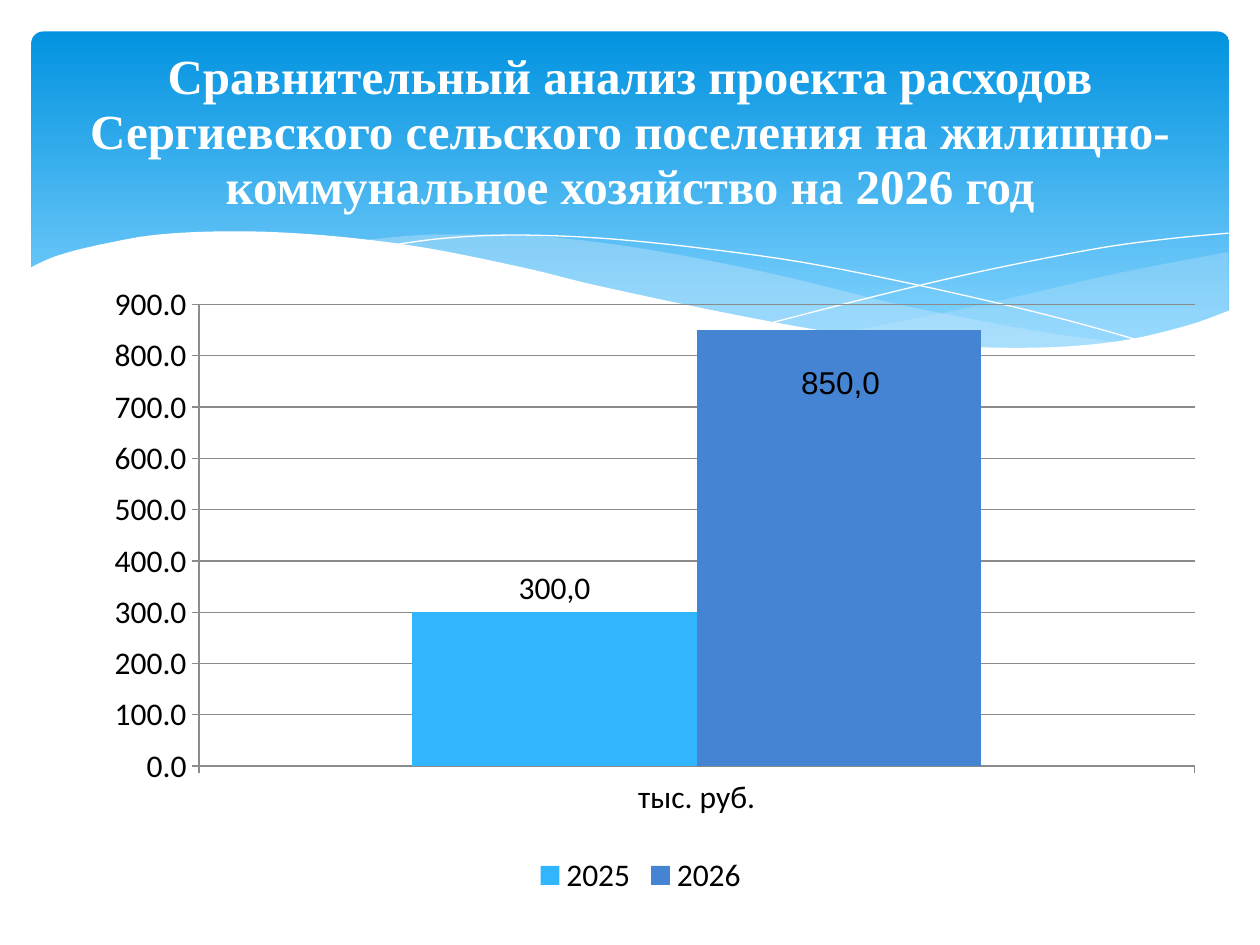
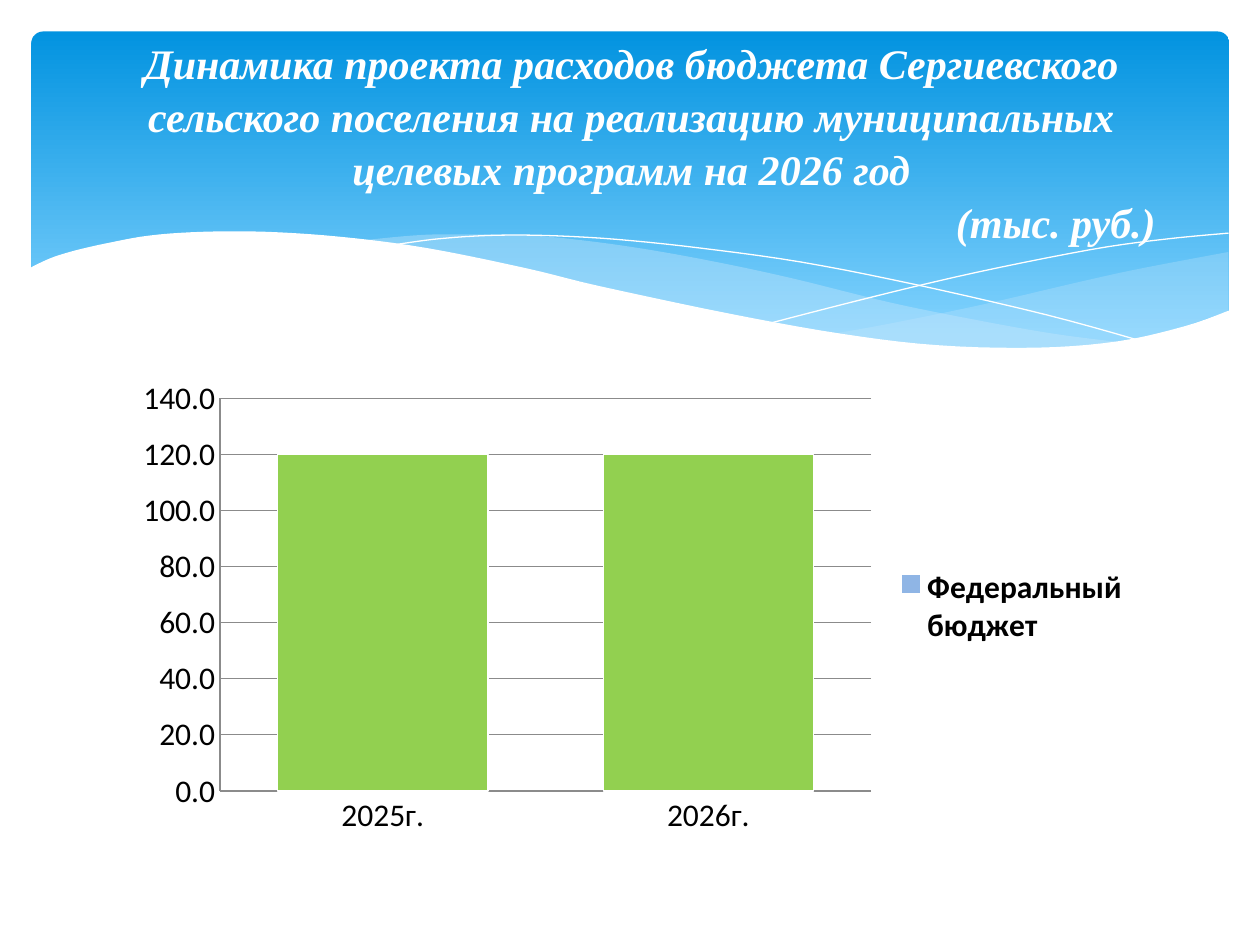
from lxml import etree
from pptx import Presentation
from pptx.chart.data import CategoryChartData
from pptx.dml.color import RGBColor
from pptx.enum import chart as charts, shapes, text
from pptx.oxml import parse_xml
from pptx.oxml.ns import nsdecls, qn
from pptx.util import Pt

# Colours and fonts
WHITE = RGBColor(0xFF, 0xFF, 0xFF)
BLACK = RGBColor(0, 0, 0)
BAND_TOP = RGBColor(0x02, 0x93, 0xE0)
BAND_BOTTOM = RGBColor(0x83, 0xD3, 0xFE)
MIST = RGBColor(0xC6, 0xE7, 0xFC)
AXIS_GREY = RGBColor(0x8B, 0x8B, 0x8B)
SKY = RGBColor(0x31, 0xB6, 0xFD)
BLUE = RGBColor(0x45, 0x84, 0xD3)
GREEN = RGBColor(0x92, 0xD0, 0x50)
CYAN = RGBColor(0x00, 0xB0, 0xF0)
PALE_BLUE = RGBColor(0x8F, 0xB5, 0xE5)
TITLE_FONT, CHART_FONT, NOTE_FONT = "Times New Roman", "Calibri", "Arial"

# Key points of the wave curves, in points
RIGHT_HILL = [(702, 144), (652.3, 153.4), (619.2, 160.6), (560.9, 174.2),
              (508.3, 185), (475.9, 190.8)]
RIGHT_HILL_BASE = [(475.9, 190.8), (507.6, 195.1), (545, 198), (586.1, 199.4),
                   (627.8, 197.3), (662.4, 190.8), (702, 177.8)]
LONG_WAVE = [(642.2, 195.8), (602.6, 190.8), (558, 182.9), (508.3, 172.8),
             (452.9, 159.1), (409.7, 149.8), (370.1, 142.6), (334.1, 137.5),
             (302.4, 134.6), (259.9, 133.9), (236.2, 134.6), (205.9, 137.5)]
LONG_WAVE_BASE = [(205.9, 137.5), (246.2, 143.3), (290.9, 151.9), (323.3, 159.1),
                  (380.9, 172.8), (432.7, 183.6), (478.8, 191.5), (519.8, 196.6),
                  (555.8, 199.4), (588.2, 200.2), (617, 198.7), (642.2, 195.8)]
FALLING_LINE = [(222.5, 140.4), (247.7, 136.8), (278.6, 134.6), (311.8, 134.6),
                (352.1, 136.8), (400.3, 141.8), (457.9, 149.8), (523.4, 162.7),
                (598.3, 180), (653, 195.1)]
RISING_LINE = [(441.4, 184.3), (500.4, 169.2), (558.7, 155.5), (623.5, 142.6),
               (664.6, 136.8), (702, 133.2)]
WHITE_WAVE = [(703.4, 177.1), (676.8, 186.5), (638.6, 195.1), (592.6, 198.7),
              (535.7, 197.3), (481, 190.8), (416.9, 179.3), (342, 163.4),
              (301, 153.4), (244.1, 141.8), (195.1, 135.4), (151.9, 132.5),
              (115.9, 132.5), (85.7, 134.6), (61.2, 139), (42.5, 143.3),
              (28.8, 147.6), (16.6, 153.4)]
WHITE_WAVE_CORNERS = [(16.6, 236.9), (703.4, 236.9)]


def smooth(knots, steps=5):
    """Points of a Catmull-Rom curve through the knots."""
    ends = [knots[0], *knots, knots[-1]]
    curve = []
    for a, b, c, d in zip(ends, ends[1:], ends[2:], ends[3:]):
        for t in (step / steps for step in range(steps)):
            curve.append(tuple(
                q + t * (r - p) / 2 + t**2 * (2 * p - 5 * q + 4 * r - s) / 2
                + t**3 * (3 * q - p - 3 * r + s) / 2
                for p, q, r, s in zip(a, b, c, d)))
    return curve + [knots[-1]]


def style(font, size=18, name=CHART_FONT, color=BLACK, bold=False, italic=False):
    font.size, font.name, font.bold, font.italic = Pt(size), name, bold, italic
    font.color.rgb = color


def write(para, words, align=None, spacing=None, right_indent=0, **font):
    """Put formatted text into a paragraph."""
    para.alignment, para.line_spacing = align, spacing
    if right_indent:
        para._p.get_or_add_pPr().set("marR", str(Pt(right_indent)))
    span = para.add_run()
    span.text = words
    style(span.font, **font)


class Deck:
    def __init__(self):
        self.file = Presentation()
        self.file.slide_width, self.file.slide_height = Pt(720), Pt(540)
        self.page = None

    def add_page(self):
        self.page = self.file.slides.add_slide(self.file.slide_layouts[5])
        self.band()

    def band(self):
        """Blue header with waves."""
        header = self.page.shapes.add_shape(
            shapes.MSO_SHAPE.ROUNDED_RECTANGLE, Pt(18), Pt(18), Pt(684.5), Pt(194.4))
        header.adjustments[0] = 0.034
        header.shadow.inherit = False
        header.line.fill.background()
        header.fill.gradient()
        header.fill.gradient_angle = 270
        for stop, color, place in zip(header.fill.gradient_stops,
                                      (BAND_TOP, BAND_BOTTOM), (0, 0.9)):
            stop.color.rgb, stop.position = color, place
        self.curve(smooth(RIGHT_HILL) + smooth(RIGHT_HILL_BASE), fill=MIST, opacity=29)
        self.curve(smooth(LONG_WAVE) + smooth(LONG_WAVE_BASE), fill=MIST, opacity=40)
        self.curve(smooth(FALLING_LINE))
        self.curve(smooth(RISING_LINE))
        self.curve(smooth(WHITE_WAVE) + WHITE_WAVE_CORNERS, fill=WHITE)

    def curve(self, points, fill=None, opacity=100):
        """Filled outline, or a white hairline when there is no fill."""
        start, *rest = [(Pt(x), Pt(y)) for x, y in points]
        builder = self.page.shapes.build_freeform(*start)
        builder.add_line_segments(rest, close=fill is not None)
        shape = builder.convert_to_shape()
        shape.shadow.inherit = False
        if fill is None:
            shape.fill.background()
            shape.line.color.rgb, shape.line.width = WHITE, Pt(0)
            return
        shape.line.fill.background()
        shape.fill.solid()
        shape.fill.fore_color.rgb = fill
        if opacity < 100:
            color = shape._element.spPr.find(qn("a:solidFill"))[0]
            etree.SubElement(color, qn("a:alpha")).set("val", str(opacity * 1000))

    def title(self, left, top, width, height, lines, **font):
        """Each line is its words and its paragraph format."""
        box = self.page.shapes.title
        box.left, box.top, box.width, box.height = map(Pt, (left, top, width, height))
        self.page.shapes._spTree.append(box._element)
        frame = box.text_frame
        frame.auto_size = text.MSO_AUTO_SIZE.NONE
        frame.vertical_anchor = text.MSO_ANCHOR.MIDDLE
        for index, (words, layout) in enumerate(lines):
            para = frame.add_paragraph() if index else frame.paragraphs[0]
            write(para, words, name=TITLE_FONT, color=WHITE, bold=True, **layout, **font)

    def note(self, left, top, width, height, words):
        box = self.page.shapes.add_textbox(*map(Pt, (left, top, width, height)))
        box.text_frame.word_wrap = True
        write(box.text_frame.paragraphs[0], words, name=NOTE_FONT)

    def chart(self, kind, place, categories, series, gap, overlap, top, step, tick,
              legend, area, outline=None, bold_legend=False, hidden=()):
        """Column chart; series is a list of (name, values, colour)."""
        data = CategoryChartData(number_format="#,##0.0")
        data.categories = categories
        for name, values, _ in series:
            data.add_series(name, values)
        chart = self.page.shapes.add_chart(kind, *map(Pt, place), data).chart
        style(chart.font, size=10)
        chart.has_title = False

        # Columns
        plot = chart.plots[0]
        plot.gap_width, plot.overlap, plot.vary_by_categories = gap, overlap, False
        for column, (_, _, color) in zip(plot.series, series):
            column.format.fill.solid()
            column.format.fill.fore_color.rgb = color
            if outline is not None:
                column.format.line.color.rgb = outline
                column.format.line.width = Pt(0.75)

        # Axes
        scale = chart.value_axis
        scale.minimum_scale, scale.maximum_scale, scale.major_unit = 0, top, step
        scale.tick_labels.number_format = "#,##0.0"
        scale.tick_labels.number_format_is_linked = False
        for axis in (chart.category_axis, scale):
            axis.major_tick_mark = tick
            style(axis.tick_labels.font)
        for line in (chart.category_axis.format.line, scale.format.line,
                     scale.major_gridlines.format.line):
            line.color.rgb, line.width = AXIS_GREY, Pt(0.75)

        # Legend
        chart.has_legend = True
        chart.legend.position, chart.legend.include_in_layout = legend, False
        style(chart.legend.font, bold=bold_legend)
        for index in reversed(hidden):
            chart.legend._element.find(qn("c:legendPos")).addnext(parse_xml(
                f'<c:legendEntry {nsdecls("c")}><c:idx val="{index}"/>'
                '<c:delete val="1"/></c:legendEntry>'))

        # Plot area
        plot_area = chart._chartSpace.chart.plotArea
        for old in plot_area.findall(qn("c:layout")):
            plot_area.remove(old)
        parts = "".join(f'<c:{key}Mode val="edge"/>' for key in "xy") + "".join(
            f'<c:{key} val="{value}"/>' for key, value in zip("xywh", area))
        plot_area.insert(0, parse_xml(
            f'<c:layout {nsdecls("c")}><c:manualLayout><c:layoutTarget val="inner"/>'
            f'{parts}</c:manualLayout></c:layout>'))
        return chart


def main():
    deck = Deck()
    center, right = text.PP_ALIGN.CENTER, text.PP_ALIGN.RIGHT

    # Slide 1: housing and utilities
    deck.add_page()
    housing = deck.chart(
        charts.XL_CHART_TYPE.COLUMN_CLUSTERED, (42.5, 158.4, 647.3, 356.4),
        ["тыс. руб."], [("2025", [300], SKY), ("2026", [850], BLUE)],
        gap=150, overlap=0, top=900, step=100, tick=charts.XL_TICK_MARK.OUTSIDE,
        legend=charts.XL_LEGEND_POSITION.BOTTOM, area=(0.11, 0.044, 0.879, 0.74))
    label = housing.plots[0].series[0].points[0].data_label
    write(label.text_frame.paragraphs[0], "300,0")
    label.position = charts.XL_LABEL_POSITION.OUTSIDE_END
    deck.title(36, 26.6, 648, 98.6, [
        ("Сравнительный анализ проекта расходов Сергиевского сельского поселения "
         "на жилищно-коммунальное хозяйство на 2026 год",
         dict(align=center, spacing=0.94))], size=28)
    deck.note(450.7, 203.8, 92.2, 47.5, "850,0")

    # Slide 2: municipal programmes
    deck.add_page()
    deck.chart(
        charts.XL_CHART_TYPE.COLUMN_STACKED, (69.8, 211, 583.2, 271.4),
        ["2025г.", "2026г."],
        [("Series 1", [120, 120], GREEN), ("Series 2", [0, 0], CYAN),
         ("Федеральный бюджет", [0, 0], PALE_BLUE)],
        gap=55, overlap=100, top=140, step=20, tick=charts.XL_TICK_MARK.NONE,
        legend=charts.XL_LEGEND_POSITION.RIGHT, area=(0.096, 0.061, 0.638, 0.827),
        outline=WHITE, bold_legend=True, hidden=(0, 1))
    deck.title(36.7, 25.9, 648, 109.4, [
        ("Динамика проекта расходов бюджета Сергиевского сельского поселения "
         "на реализацию муниципальных целевых программ на 2026 год",
         dict(align=center, spacing=1.05)),
        ("(тыс. руб.)", dict(align=right, spacing=1.05, right_indent=17))],
        size=24, italic=True)

    deck.file.save("out.pptx")


if __name__ == "__main__":
    main()
